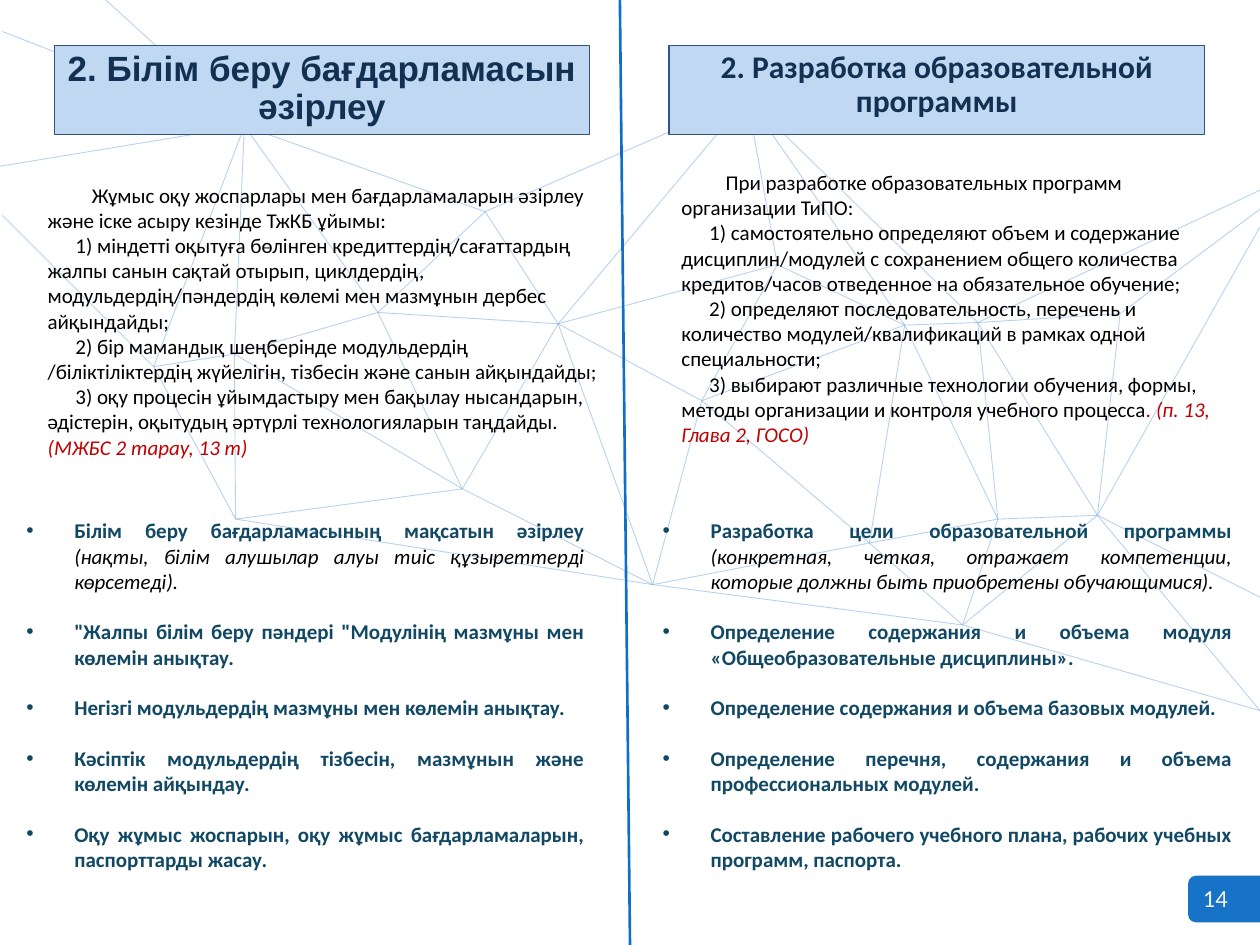
"""Build a bilingual slide on developing an educational programme."""
from dataclasses import dataclass

from lxml.etree import SubElement
from pptx import Presentation
from pptx.dml.color import RGBColor
from pptx.enum.shapes import MSO_CONNECTOR as CONN, MSO_SHAPE as SHAPE
from pptx.enum.text import MSO_ANCHOR as ANCHOR, MSO_AUTO_SIZE as FIT, PP_ALIGN as ALIGN
from pptx.oxml.ns import qn
from pptx.util import Inches, Pt


@dataclass(frozen=True)
class Theme:
    font: str = "Calibri"
    mesh: str = "82B1E5"
    accent: str = "0F6FC6"
    banner: str = "C1D8F2"
    banner_line: str = "305480"
    heading: str = "113052"
    item: str = "114864"
    text: str = "000000"
    source: str = "C00000"
    number: str = "F2F2F2"
    body_size: int = 12
    number_size: int = 14
    item_gap: float = 14.5


T = Theme()
SLIDE_W, SLIDE_H = 10, 7.5
SLIDE_NUMBER = "14"
HEADING_TOP, HEADING_W, HEADING_H = 0.36, 4.25, 0.71
RULES_H = 2.39
LIST_TOP, LIST_H = 4.06, 3.4
FIRST_INDENT, RULE_INDENT, BULLET_INDENT = 0.35, 0.22, 0.38

COLUMNS = [
    {
        "heading": "2. Білім беру бағдарламасын әзірлеу",
        "heading_font": ("Arial", 20),
        "heading_left": 0.43,
        "rules_at": (0.28, 1.35, 4.65),
        "list_at": (0.11, 4.63),
        "rules": [
            "Жұмыс оқу жоспарлары мен бағдарламаларын әзірлеу және іске асыру кезінде ТжКБ ұйымы:",
            "1) міндетті оқытуға бөлінген кредиттердің/сағаттардың жалпы санын сақтай отырып, "
            "циклдердің, модульдердің/пәндердің көлемі мен мазмұнын дербес айқындайды;",
            "2) бір мамандық шеңберінде модульдердің /біліктіліктердің жүйелігін, тізбесін "
            "және санын айқындайды;",
            "3) оқу процесін ұйымдастыру мен бақылау нысандарын, әдістерін, оқытудың әртүрлі "
            "технологияларын таңдайды. ",
        ],
        "source": "(МЖБС 2 тарау, 13 т)",
        "items": [
            "Білім беру бағдарламасының мақсатын әзірлеу ",
            "\"Жалпы білім беру пәндері \"Модулінің мазмұны мен көлемін анықтау.",
            "Негізгі модульдердің мазмұны мен көлемін анықтау.",
            "Кәсіптік модульдердің тізбесін, мазмұнын және көлемін айқындау.",
            "Оқу жұмыс жоспарын, оқу жұмыс бағдарламаларын, паспорттарды жасау.",
        ],
        "remark": "(нақты, білім алушылар алуы тиіс құзыреттерді көрсетеді).",
    },
    {
        "heading": "2. Разработка образовательной программы",
        "heading_font": (T.font, 18),
        "heading_left": 5.31,
        "rules_at": (5.31, 1.25, 4.41),
        "list_at": (5.16, 4.72),
        "rules": [
            "При разработке образовательных программ организации ТиПО:",
            "1) самостоятельно определяют объем и содержание дисциплин/модулей с сохранением "
            "общего количества кредитов/часов отведенное на обязательное обучение;",
            "2) определяют последовательность, перечень и количество модулей/квалификаций "
            "в рамках одной специальности;",
            "3) выбирают различные технологии обучения, формы, методы организации и контроля "
            "учебного процесса",
        ],
        "source": ". (п. 13, Глава 2, ГОСО)",
        "items": [
            "Разработка цели образовательной программы ",
            "Определение содержания и объема модуля «Общеобразовательные дисциплины».",
            "Определение содержания и объема базовых модулей.",
            "Определение перечня, содержания и объема профессиональных модулей.",
            "Составление рабочего учебного плана, рабочих учебных программ, паспорта.",
        ],
        "remark": "(конкретная, четкая, отражает компетенции, которые должны быть "
                  "приобретены обучающимися).",
    },
]

MESH_NODES = {
    "A": (0.84, 0), "B": (0.02, 0.25), "C": (0, 1.32), "D": (0.02, 1.71),
    "E": (1.94, 1), "F": (1.22, 2.91), "G": (1.86, 2.81), "H": (3, 2.48),
    "I": (3.85, 1.68), "J": (1.87, 4.12), "K": (3.67, 3.88), "L": (4.43, 2.57),
    "M": (5.18, 4.64), "N": (5.57, 3.18), "O": (5.93, 0.78), "P": (6.17, 2.1),
    "Q": (7.18, 2.58), "R": (7.76, 2.56), "S": (6.9, 4.31), "T": (7.92, 4.12),
    "U": (7.64, 4.96), "V": (8.89, 2.49), "W": (8.71, 4.09),
    "1": (SLIDE_W, 1.51), "2": (SLIDE_W, 1.66), "3": (SLIDE_W, 1.8),
    "4": (SLIDE_W, 4.74), "5": (SLIDE_W, 5.64),
}
MESH_LINKS = {
    "E": "ABCFGHI", "F": "DGJ", "G": "HJK", "H": "IKL", "I": "LO", "J": "KM", "K": "LM",
    "L": "MNOP", "M": "NSU", "N": "PQS", "O": "PQR", "P": "Q", "Q": "RST", "R": "TVW1",
    "S": "TU", "T": "UW", "U": "W5", "V": "W2", "W": "345",
}


def rgb(color):
    return RGBColor.from_string(color)


def set_alpha(sp_pr, percent):
    color = next(sp_pr.iter(qn("a:srgbClr")))
    SubElement(color, qn("a:alpha")).set("val", str(percent * 1000))


def add_line(slide, start, end, color, width, alpha=100):
    line = slide.shapes.add_connector(CONN.STRAIGHT, *map(Inches, (*start, *end)))
    line.line.color.rgb = rgb(color)
    line.line.width = Pt(width)
    sp_pr = line.element.find(qn("p:spPr"))
    set_alpha(sp_pr, alpha)
    SubElement(sp_pr, qn("a:effectLst"))


def add_mesh(slide):
    for node, neighbours in MESH_LINKS.items():
        for neighbour in neighbours:
            add_line(slide, MESH_NODES[node], MESH_NODES[neighbour], T.mesh, 0.5, alpha=56)


def place(sp, box, anchor=ANCHOR.TOP):
    sp.left, sp.top, sp.width, sp.height = map(Inches, box)
    sp.element.getparent().append(sp.element)
    tf = sp.text_frame
    tf.word_wrap, tf.auto_size, tf.vertical_anchor = True, FIT.NONE, anchor
    return tf


def add_run(p, text, size=T.body_size, font=T.font, color=T.text, bold=False, italic=False):
    r = p.add_run()
    r.text = text
    r.font.size, r.font.name, r.font.color.rgb = Pt(size), font, rgb(color)
    r.font.bold, r.font.italic = bold, italic


def add_paragraph(tf, index=0, align=ALIGN.LEFT, before=0, left=0, indent=0, bullet=None):
    p = tf.add_paragraph() if index else tf.paragraphs[0]
    p.alignment, p.space_before = align, Pt(before)
    p_pr = p._p.get_or_add_pPr()
    p_pr.set("marL", str(Inches(left)))
    p_pr.set("indent", str(Inches(indent)))
    if bullet:
        SubElement(p_pr, qn("a:buFont")).set("typeface", "Arial")
        SubElement(p_pr, qn("a:buChar")).set("char", bullet)
    return p


def fill_heading(sp, column):
    tf = place(sp, (column["heading_left"], HEADING_TOP, HEADING_W, HEADING_H))
    sp.fill.solid()
    sp.fill.fore_color.rgb = rgb(T.banner)
    sp.line.color.rgb = rgb(T.banner_line)
    sp.line.width = Pt(0.75)
    p = add_paragraph(tf, align=ALIGN.CENTER)
    p.line_spacing = 0.9
    font, size = column["heading_font"]
    add_run(p, column["heading"], size=size, font=font, color=T.heading, bold=True)


def fill_rules(sp, column):
    tf = place(sp, (*column["rules_at"], RULES_H), ANCHOR.MIDDLE)
    for i, rule in enumerate(column["rules"]):
        p = add_paragraph(tf, i, indent=RULE_INDENT if i else FIRST_INDENT)
        add_run(p, rule)
    add_run(p, column["source"], color=T.source, italic=True)


def fill_list(sp, column):
    left, width = column["list_at"]
    tf = place(sp, (left, LIST_TOP, width, LIST_H))
    for i, item in enumerate(column["items"]):
        p = add_paragraph(tf, i, align=ALIGN.JUSTIFY, before=T.item_gap if i else 0,
                          left=BULLET_INDENT, indent=-BULLET_INDENT, bullet="•")
        add_run(p, item, color=T.item, bold=True)
        if i == 0:
            add_run(p, column["remark"], italic=True)


def add_number(slide):
    tab = slide.shapes.add_shape(SHAPE.ROUND_2_SAME_RECTANGLE,
                                 *map(Inches, (9.53, 6.85, 0.37, 0.57)))
    tab.rotation = 270
    tab.shadow.inherit = False
    tab.fill.solid()
    tab.fill.fore_color.rgb = rgb(T.accent)
    set_alpha(tab.element.find(qn("p:spPr")), 97)
    tab.line.fill.background()
    tf = place(slide.shapes.add_textbox(0, 0, 0, 0), (9.39, 6.96, 0.51, 0.34))
    add_run(add_paragraph(tf, align=ALIGN.CENTER), SLIDE_NUMBER,
            size=T.number_size, color=T.number)


def main():
    prs = Presentation()
    prs.slide_width, prs.slide_height = Inches(SLIDE_W), Inches(SLIDE_H)
    slide = prs.slides.add_slide(prs.slide_layouts.get_by_name("Two Content"))
    title, *lists = list(slide.placeholders)
    add_mesh(slide)
    add_number(slide)
    add_line(slide, (4.92, 0), (5, SLIDE_H), T.accent, 1.5)
    banner = slide.shapes.add_shape(SHAPE.RECTANGLE, 0, 0, 0, 0)
    banner.shadow.inherit = False
    for column, heading, listing in zip(COLUMNS, (title, banner), lists):
        fill_heading(heading, column)
        fill_rules(slide.shapes.add_textbox(0, 0, 0, 0), column)
        fill_list(listing, column)
    prs.save("out.pptx")


if __name__ == "__main__":
    main()
